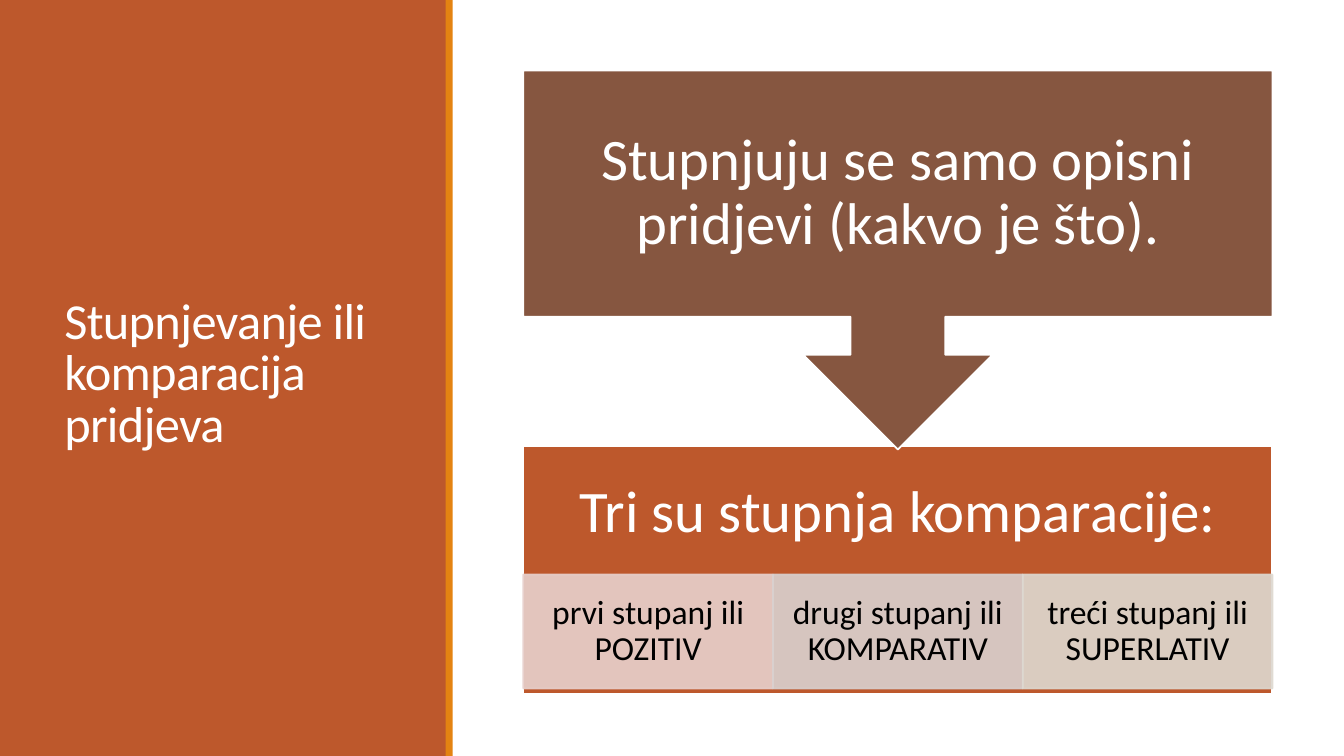
from dataclasses import dataclass

from lxml import etree
from pptx import Presentation
from pptx.dml.color import RGBColor
from pptx.enum import shapes, text
from pptx.oxml import ns
from pptx.util import Inches, Pt

COLORS = {
    "white": "FFFFFF",
    "black": "000000",
    "rust": "BD582C",
    "orange": "E48312",
    "brown": "865640",
    "pink": "E8D1CD",
    "gray": "D9D1CF",
    "sand": "DED9D1",
}
FONT = "Calibri"
LEFT, WIDTH = 5.19, 7.43  # diagram column
RECT = shapes.MSO_SHAPE.RECTANGLE


@dataclass
class Block:
    left: float
    top: float
    width: float
    height: float
    fill: str
    line: str | None = None
    kind: shapes.MSO_SHAPE = RECT
    opacity: int = 100


@dataclass
class Label:
    words: str
    size: float
    color: str = "white"
    insets: tuple[float, float, float, float] = (0.33, 0.33, 0.33, 0.33)
    spacing: float = 0.9
    align: text.PP_ALIGN = text.PP_ALIGN.CENTER


def rgb(name: str) -> RGBColor:
    return RGBColor.from_string(COLORS[name])


def set_opacity(sp, percent: int) -> None:
    for color in sp._element.spPr.iter(ns.qn("a:srgbClr")):
        etree.SubElement(color, ns.qn("a:alpha"), val=str(percent * 1000))


def add_block(slide, block: Block):
    sp = slide.shapes.add_shape(
        block.kind, *map(Inches, (block.left, block.top, block.width, block.height))
    )
    sp.shadow.inherit = False
    sp.fill.solid()
    sp.fill.fore_color.rgb = rgb(block.fill)
    if block.line:
        sp.line.color.rgb = rgb(block.line)
        sp.line.width = Pt(1.25)
    else:
        sp.line.fill.background()
    if block.opacity < 100:
        set_opacity(sp, block.opacity)
    return sp


def write(sp, label: Label):
    tf = sp.text_frame
    tf.word_wrap = True
    tf.vertical_anchor = text.MSO_ANCHOR.MIDDLE
    tf.margin_left, tf.margin_top, tf.margin_right, tf.margin_bottom = map(
        Inches, label.insets
    )
    p = tf.paragraphs[0]
    p.alignment = label.align
    p.line_spacing = label.spacing
    p.font.name = FONT
    p.font.size = Pt(label.size)
    p.font.color.rgb = rgb(label.color)
    r = p.add_run()
    r.text = label.words
    return r


def main() -> None:
    prs = Presentation()
    prs.slide_width, prs.slide_height = Inches(13.33), Inches(7.5)
    slide = prs.slides.add_slide(prs.slide_layouts[6])

    # Side panel with title
    add_block(slide, Block(0, 0, 4.43, 7.5, "rust"))
    title = slide.shapes.add_textbox(*map(Inches, (0.54, 0.57, 3.37, 6.31)))
    r = write(title, Label("Stupnjevanje ili komparacija pridjeva", 36,
                           insets=(0.1, 0.05, 0.1, 0.05), spacing=0.85,
                           align=text.PP_ALIGN.LEFT))
    r._r.get_or_add_rPr().set("spc", "-50")
    add_block(slide, Block(4.42, 0, 0.07, 7.5, "orange"))

    # Lower panel: its heading stays above the row of degrees
    panel = add_block(slide, Block(LEFT, 4.43, WIDTH, 2.45, "rust", "white"))
    write(panel, Label("Tri su stupnja komparacije:", 42,
                       insets=(0.33, 0.33, 0.33, 1.46)))

    # Three degrees of comparison
    degrees = [
        ("prvi stupanj ili POZITIV", "pink"),
        ("drugi stupanj ili KOMPARATIV", "gray"),
        ("treći stupanj ili SUPERLATIV", "sand"),
    ]
    cell_width = WIDTH / len(degrees)
    for i, (words, color) in enumerate(degrees):
        cell = add_block(slide, Block(LEFT + i * cell_width, 5.7, cell_width, 1.13,
                                      color, color, opacity=90))
        write(cell, Label(words, 24, "black", (0.19, 0.03, 0.19, 0.03)))

    # Upper callout pointing down
    callout = add_block(slide, Block(LEFT, 0.7, WIDTH, 3.76, "brown", "white",
                                     shapes.MSO_SHAPE.DOWN_ARROW_CALLOUT))
    write(callout, Label("Stupnjuju se samo opisni pridjevi (kakvo je što).", 42))

    prs.save("out.pptx")


if __name__ == "__main__":
    main()
